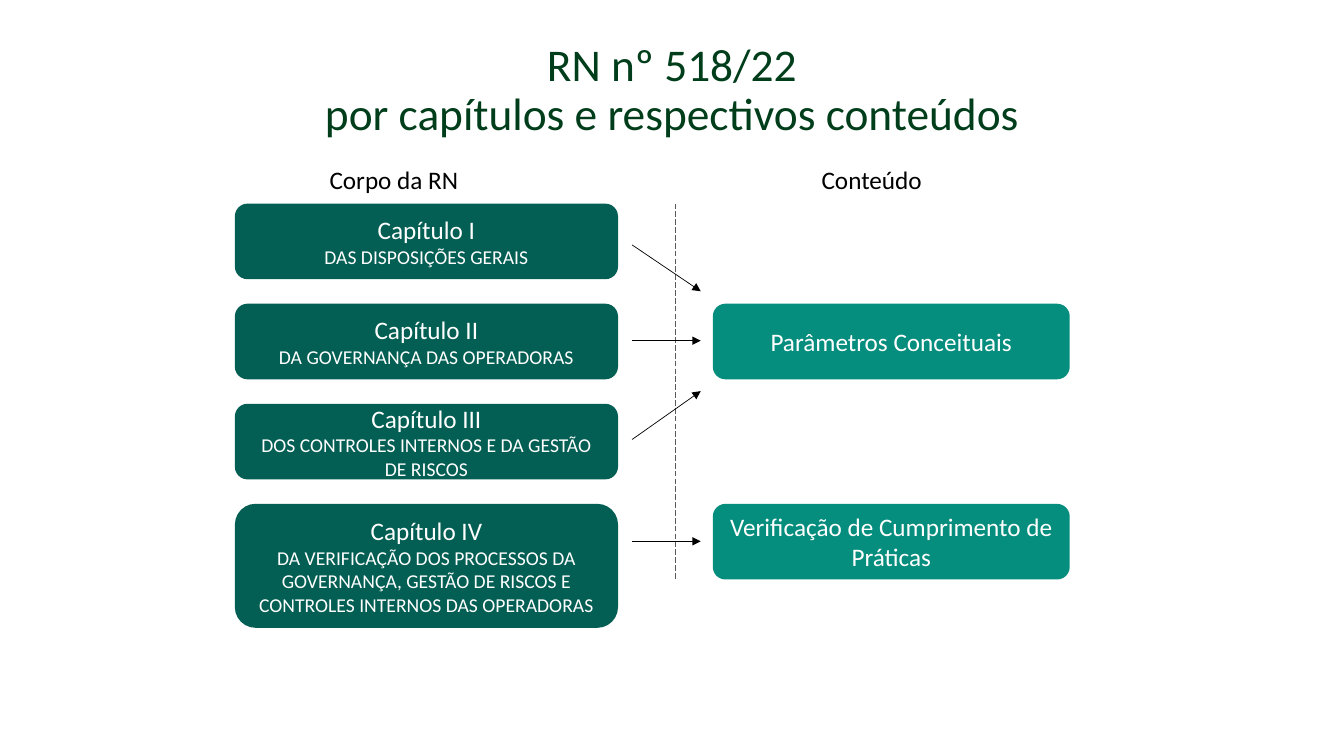
"""Build the slide that maps the chapters of RN nº 518/22 to their contents."""
from lxml import etree
from pptx import Presentation
from pptx import util as u
from pptx.dml.color import RGBColor
from pptx.enum import dml, shapes, text
from pptx.oxml import ns

TITLE = "RN nº 518/22\vpor capítulos e respectivos conteúdos"
HEADINGS = "\tCorpo da RN\tConteúdo"
HEADING_TABS = (0.84, 5.72)
CHAPTERS = [
    ("Capítulo I", "DAS DISPOSIÇÕES GERAIS"),
    ("Capítulo II", "DA GOVERNANÇA DAS OPERADORAS"),
    ("Capítulo III", "DOS CONTROLES INTERNOS E DA GESTÃO DE RISCOS"),
    ("Capítulo IV", "DA VERIFICAÇÃO DOS PROCESSOS DA GOVERNANÇA, GESTÃO DE "
                    "RISCOS E CONTROLES INTERNOS DAS OPERADORAS"),
]
CONTENTS = [(1, "Parâmetros Conceituais"), (3, "Verificação de Cumprimento de Práticas")]
ARROWS = [(2.43, 2.89), (3.38, 3.38), (4.36, 3.88), (5.37, 5.37)]

FONT = "Calibri"
TITLE_GREEN = RGBColor(0x00, 0x3E, 0x1B)
CHAPTER_GREEN = RGBColor(0x03, 0x5E, 0x53)
CONTENT_GREEN = RGBColor(0x05, 0x8D, 0x7D)
WHITE = RGBColor(0xFF, 0xFF, 0xFF)
BLACK = RGBColor(0x00, 0x00, 0x00)
GREY = RGBColor(0x59, 0x59, 0x59)

CHAPTER_LEFT, CHAPTER_WIDTH = 2.33, 3.8
CONTENT_LEFT, CONTENT_WIDTH = 7.07, 3.54
ROW_TOP, ROW_STEP, BOX_HEIGHT, LAST_HEIGHT = 2.02, 0.993, 0.75, 1.23
ARROW_LEFT, ARROW_RIGHT = 6.27, 6.95
DIVIDER_X, DIVIDER_BOTTOM = 6.7, 5.74


def style(paragraph, size, color):
    for run in paragraph.runs:
        run.font.name = FONT
        run.font.size = u.Pt(size)
        run.font.color.rgb = color


def add_label(slide, left, top, width, height, words):
    frame = slide.shapes.add_textbox(*map(u.Inches, (left, top, width, height))).text_frame
    frame.word_wrap = True
    frame.text = words
    return frame


def add_box(slide, left, row, width, height, fill, lines):
    top = ROW_TOP + row * ROW_STEP
    shape = slide.shapes.add_shape(shapes.MSO_SHAPE.ROUNDED_RECTANGLE,
                                   *map(u.Inches, (left, top, width, height)))
    shape.shadow.inherit = False
    shape.fill.solid()
    shape.fill.fore_color.rgb = fill
    shape.line.fill.background()
    frame = shape.text_frame
    frame.word_wrap = True
    frame.vertical_anchor = text.MSO_ANCHOR.MIDDLE
    frame.text = "\n".join(lines)
    for paragraph, size in zip(frame.paragraphs, (18, 14)):
        paragraph.alignment = text.PP_ALIGN.CENTER
        style(paragraph, size, WHITE)


def add_line(slide, start, end, color):
    line = slide.shapes.add_connector(shapes.MSO_CONNECTOR.STRAIGHT,
                                      *map(u.Inches, (*start, *end)))
    line.line.color.rgb = color
    line.line.width = u.Pt(0.5)
    etree.SubElement(line._element.spPr, ns.qn("a:effectLst"))
    return line


def main():
    presentation = Presentation()
    presentation.slide_width, presentation.slide_height = u.Inches(13.33), u.Inches(7.5)
    slide = presentation.slides.add_slide(presentation.slide_layouts[6])

    title = add_label(slide, 0, 0.47, 13.33, 0.97, TITLE)
    title.vertical_anchor = text.MSO_ANCHOR.BOTTOM
    title.paragraphs[0].alignment = text.PP_ALIGN.CENTER
    title.paragraphs[0].line_spacing = 0.9
    style(title.paragraphs[0], 32.4, TITLE_GREEN)

    for row, lines in enumerate(CHAPTERS):
        height = LAST_HEIGHT if row == len(CHAPTERS) - 1 else BOX_HEIGHT
        add_box(slide, CHAPTER_LEFT, row, CHAPTER_WIDTH, height, CHAPTER_GREEN, lines)
    for row, words in CONTENTS:
        add_box(slide, CONTENT_LEFT, row, CONTENT_WIDTH, BOX_HEIGHT, CONTENT_GREEN, [words])

    divider = add_line(slide, (DIVIDER_X, ROW_TOP), (DIVIDER_X, DIVIDER_BOTTOM), GREY)
    divider.line.dash_style = dml.MSO_LINE.LONG_DASH
    for start_y, end_y in ARROWS:
        arrow = add_line(slide, (ARROW_LEFT, start_y), (ARROW_RIGHT, end_y), BLACK)
        etree.SubElement(arrow.line._get_or_add_ln(), ns.qn("a:tailEnd"), type="triangle")

    headings = add_label(slide, CHAPTER_LEFT, 1.58, 9.01, 0.4, HEADINGS).paragraphs[0]
    tabs = etree.SubElement(headings._p.get_or_add_pPr(), ns.qn("a:tabLst"))
    for position in HEADING_TABS:
        etree.SubElement(tabs, ns.qn("a:tab"), pos=str(u.Inches(position)), algn="l")
    style(headings, 18, BLACK)

    presentation.save("out.pptx")


if __name__ == "__main__":
    main()
